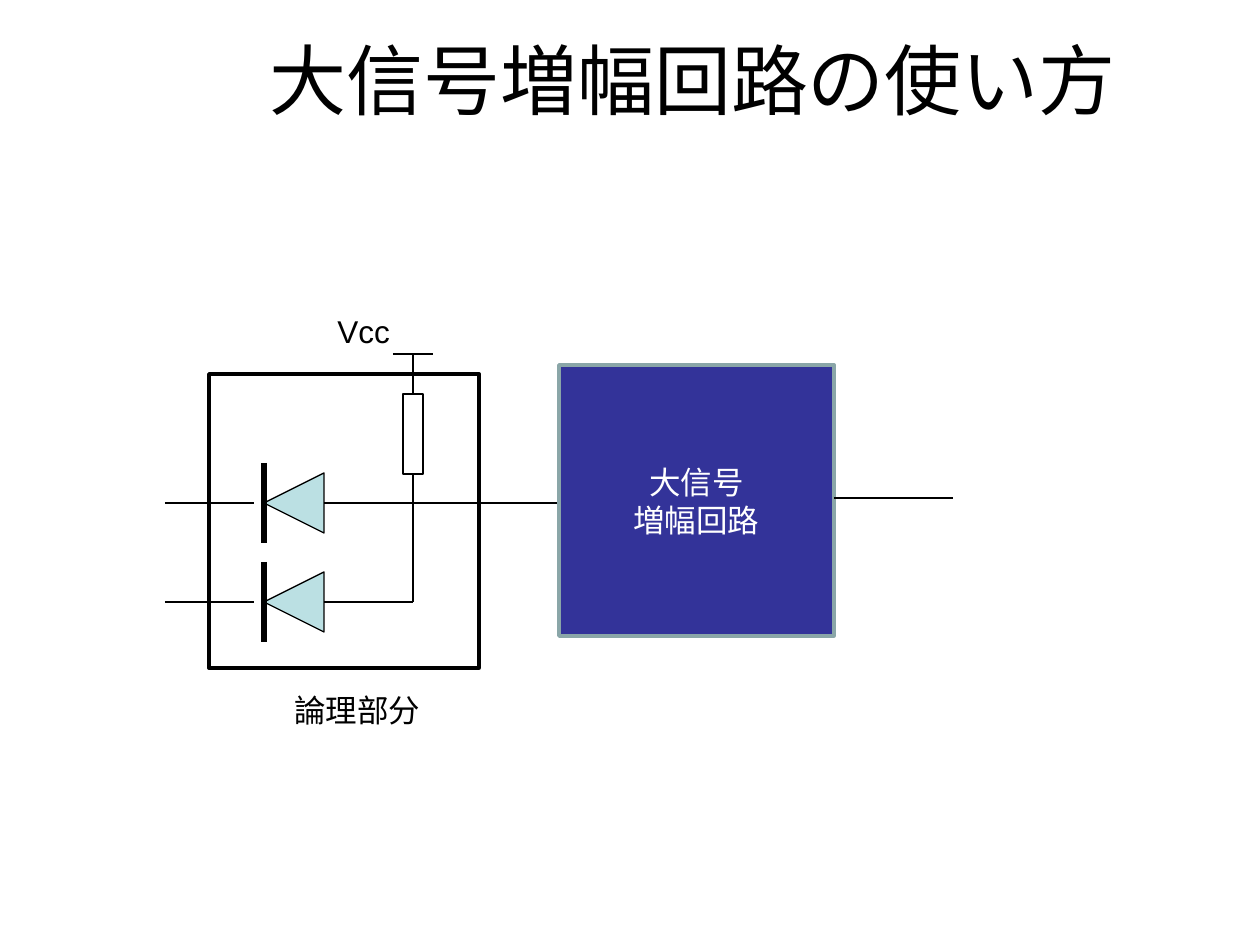
from pptx import Presentation
from pptx.dml.color import RGBColor
from pptx.enum.shapes import MSO_CONNECTOR, MSO_SHAPE
from pptx.enum.text import MSO_ANCHOR, PP_ALIGN
from pptx.oxml.ns import qn
from pptx.util import Pt
from lxml import etree

STRAIGHT = MSO_CONNECTOR.STRAIGHT
RECTANGLE = MSO_SHAPE.RECTANGLE
TRIANGLE = MSO_SHAPE.ISOSCELES_TRIANGLE
MIDDLE = MSO_ANCHOR.MIDDLE
LEFT, CENTER = PP_ALIGN.LEFT, PP_ALIGN.CENTER

BLACK = RGBColor(0x00, 0x00, 0x00)
WHITE = RGBColor(0xFF, 0xFF, 0xFF)
DIODE_FILL = RGBColor(0xBB, 0xE0, 0xE3)
AMPLIFIER_FILL = RGBColor(0x33, 0x33, 0x99)
AMPLIFIER_EDGE = RGBColor(0x8A, 0xA6, 0xA8)
FONT = "Arial"
THIN, FRAME, BAR = 0.75, 2, 3
EMU_PER_PX = 914400 // 126


def px(length):
    return length * EMU_PER_PX


def add_wire(shapes, x1, y1, x2, y2, weight=THIN):
    wire = shapes.add_connector(STRAIGHT, px(x1), px(y1), px(x2), px(y2))
    wire.line.color.rgb = BLACK
    wire.line.width = Pt(weight)
    etree.SubElement(wire._element.spPr, qn("a:effectLst"))


def add_part(shapes, kind, left, top, width, height, fill=None, edge=BLACK, weight=THIN):
    part = shapes.add_shape(kind, px(left), px(top), px(width), px(height))
    part.shadow.inherit = False
    if fill is None:
        part.fill.background()
    else:
        part.fill.solid()
        part.fill.fore_color.rgb = fill
    part.line.color.rgb = edge
    part.line.width = Pt(weight)
    return part


def write(frame, lines, size, color=BLACK, align=LEFT):
    frame.text = "\n".join(lines)
    for paragraph in frame.paragraphs:
        paragraph.alignment = align
        paragraph.font.name = FONT
        paragraph.font.size = Pt(size)
        paragraph.font.color.rgb = color


def add_label(shapes, text, left, top, width, height):
    label = shapes.add_textbox(px(left), px(top), px(width), px(height))
    label.text_frame.word_wrap = False
    write(label.text_frame, [text], 18)


def add_title(shapes, left, top, width, height):
    title = shapes.add_textbox(px(left), px(top), px(width), px(height))
    title.text_frame.word_wrap = True
    title.text_frame.vertical_anchor = MIDDLE
    write(title.text_frame, ["大信号増幅回路の使い方"], 44, align=CENTER)


def add_diode(shapes, left, center):
    diode = shapes.add_group_shape().shapes
    cathode, anode = left + 99, left + 159
    body = add_part(diode, TRIANGLE, cathode, center - 30, 60, 60, DIODE_FILL)
    body.rotation = 270
    add_wire(diode, cathode, center - 40, cathode, center + 40, BAR)
    add_wire(diode, anode, center, left + 248, center)
    add_wire(diode, left, center, left + 89, center)


def add_logic_section(shapes, left, top, width, height, output_end):
    rail = left + 204
    supply = top - 20
    output, lower_input = top + 129, top + 228
    for center in (output, lower_input):
        add_diode(shapes, left - 44, center)
    add_part(shapes, RECTANGLE, rail - 10, top + 20, 20, 80)
    add_wire(shapes, rail - 20, supply, rail + 20, supply)
    add_wire(shapes, rail, supply, rail, top + 20)
    add_wire(shapes, rail, top + 100, rail, lower_input)
    add_wire(shapes, rail, output, output_end, output)
    add_label(shapes, "Vcc", left + 116, top - 68, 78, 50)
    add_part(shapes, RECTANGLE, left, top, width, height, weight=FRAME)
    add_label(shapes, "論理部分", left + 73, top + height + 17, 152, 50)


def add_amplifier(shapes, left, top, width, height):
    amplifier = add_part(shapes, RECTANGLE, left, top, width, height,
                         AMPLIFIER_FILL, AMPLIFIER_EDGE, FRAME)
    amplifier.text_frame.vertical_anchor = MIDDLE
    write(amplifier.text_frame, ["大信号", "増幅回路"], 18, WHITE, CENTER)
    right, output = left + width, top + 133
    add_wire(shapes, right, output, right + 119, output)


def main():
    presentation = Presentation()
    presentation.slide_width = px(1260)
    presentation.slide_height = px(945)
    shapes = presentation.slides.add_slide(presentation.slide_layouts[6]).shapes
    amplifier_left = 559
    add_title(shapes, 126, 0, 1134, 158)
    add_logic_section(shapes, 209, 374, 270, 294, amplifier_left)
    add_amplifier(shapes, amplifier_left, 365, 275, 271)
    presentation.save("out.pptx")


if __name__ == "__main__":
    main()
